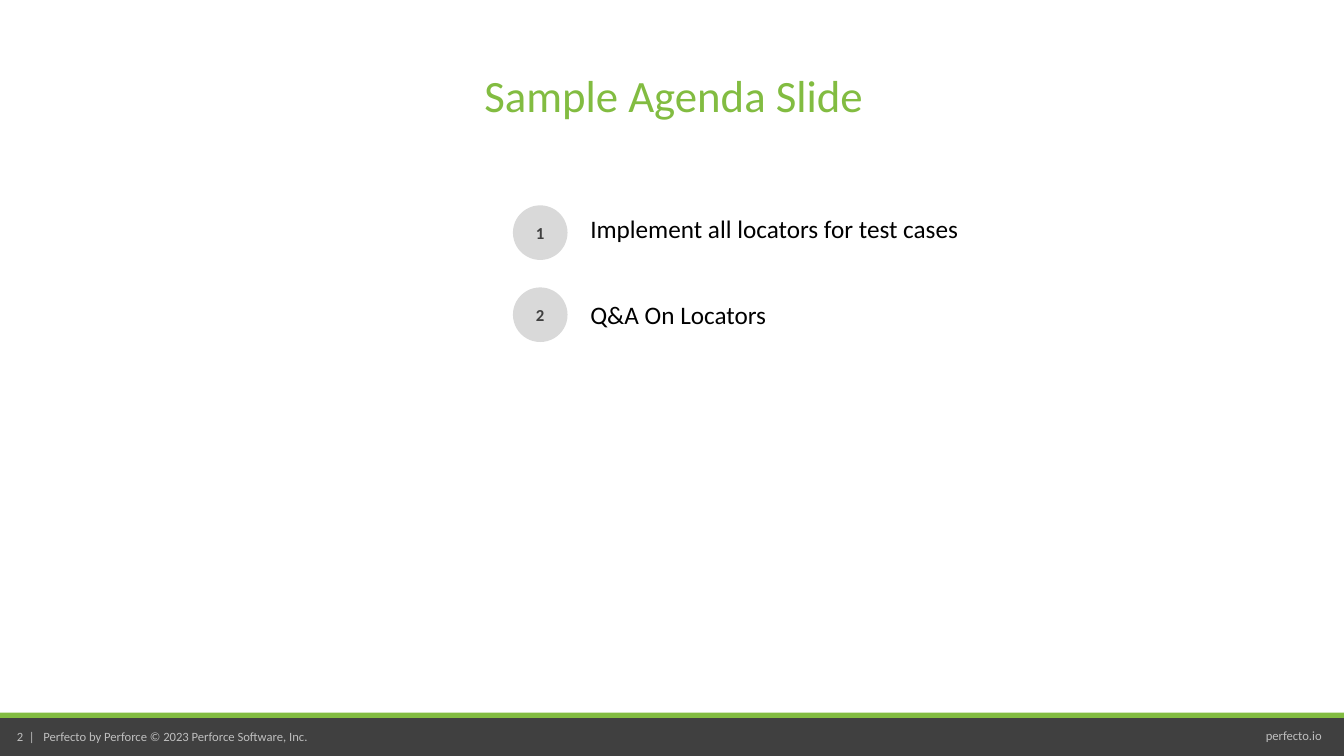
from pptx import Presentation
from pptx.dml.color import RGBColor
from pptx.enum.shapes import MSO_SHAPE as Kind
from pptx.enum.text import MSO_ANCHOR as Anchor, PP_ALIGN as Align
from pptx.oxml.ns import qn
from pptx.util import Pt
from lxml.etree import SubElement

GREEN = RGBColor(0x82, 0xBC, 0x41)
DARK = RGBColor(0x40, 0x40, 0x40)
PALE = RGBColor(0xD9, 0xD9, 0xD9)
GREY = RGBColor(0xBF, 0xBF, 0xBF)
BLACK = RGBColor(0, 0, 0)
WIDE, HIGH = 960, 540


class Page:
    font = "Calibri"

    def __init__(self, slide):
        self.slide = slide

    def fill_text(self, frame, text, size, color, align=Align.LEFT,
                  bold=False, space=None, tabs=()):
        par = frame.paragraphs[0]
        par.text = text
        par.alignment = align
        par.line_spacing = space
        if tabs:
            stops = SubElement(par._p.get_or_add_pPr(), qn("a:tabLst"))
            for stop in tabs:
                SubElement(stops, qn("a:tab"), pos=str(Pt(stop)), algn="l")
        font = par.font
        font.name, font.size, font.bold = self.font, Pt(size), bold
        font.color.rgb = color

    def shape(self, kind, x, y, w, h, fill):
        item = self.slide.shapes.add_shape(kind, Pt(x), Pt(y), Pt(w), Pt(h))
        item.shadow.inherit = False
        item.fill.solid()
        item.fill.fore_color.rgb = fill
        item.line.fill.background()
        return item

    def badge(self, x, y, side, text):
        frame = self.shape(Kind.OVAL, x, y, side, side, PALE).text_frame
        frame.margin_left = frame.margin_right = 0
        frame.margin_top = frame.margin_bottom = 0
        frame.vertical_anchor = Anchor.MIDDLE
        self.fill_text(frame, text, 12, DARK, Align.CENTER, bold=True)

    def label(self, x, y, w, h, text, size, color, wrap=True,
              anchor=Anchor.TOP, **style):
        box = self.slide.shapes.add_textbox(Pt(x), Pt(y), Pt(w), Pt(h))
        frame = box.text_frame
        frame.word_wrap = wrap
        frame.vertical_anchor = anchor
        self.fill_text(frame, text, size, color, **style)


def main():
    deck = Presentation()
    deck.slide_width, deck.slide_height = Pt(WIDE), Pt(HIGH)
    page = Page(deck.slides.add_slide(deck.slide_layouts[6]))

    # Footer
    page.shape(Kind.RECTANGLE, 0, 512, WIDE, 28, DARK)
    page.label(515.5, 515.5, 435.6, 20.9, "perfecto.io", 9, GREY,
               anchor=Anchor.MIDDLE, align=Align.RIGHT, space=0.9)
    page.label(5, 516.2, 467.3, 20.9,
               "2\t|\tPerfecto by Perforce © 2023 Perforce Software, Inc.",
               9, GREY, anchor=Anchor.MIDDLE, space=0.9, tabs=(8.6, 18.9))
    page.shape(Kind.RECTANGLE, 0, 509, WIDE, 3.8, GREEN)

    # Title
    page.label(33.1, 49, 896.4, 36.7, "Sample Agenda Slide", 32, GREEN,
               align=Align.CENTER, space=0.9)

    # Agenda
    agenda = [("Implement all locators for test cases", 149, 280),
              ("Q&A On Locators", 210.4, 141)]
    for row, (text, top, width) in enumerate(agenda):
        page.badge(366.4, 146.7 + row * 58.6, 39, str(row + 1))
        page.label(414.6, top, width, 29, text, 18, BLACK, wrap=False)

    deck.save("out.pptx")


if __name__ == "__main__":
    main()
